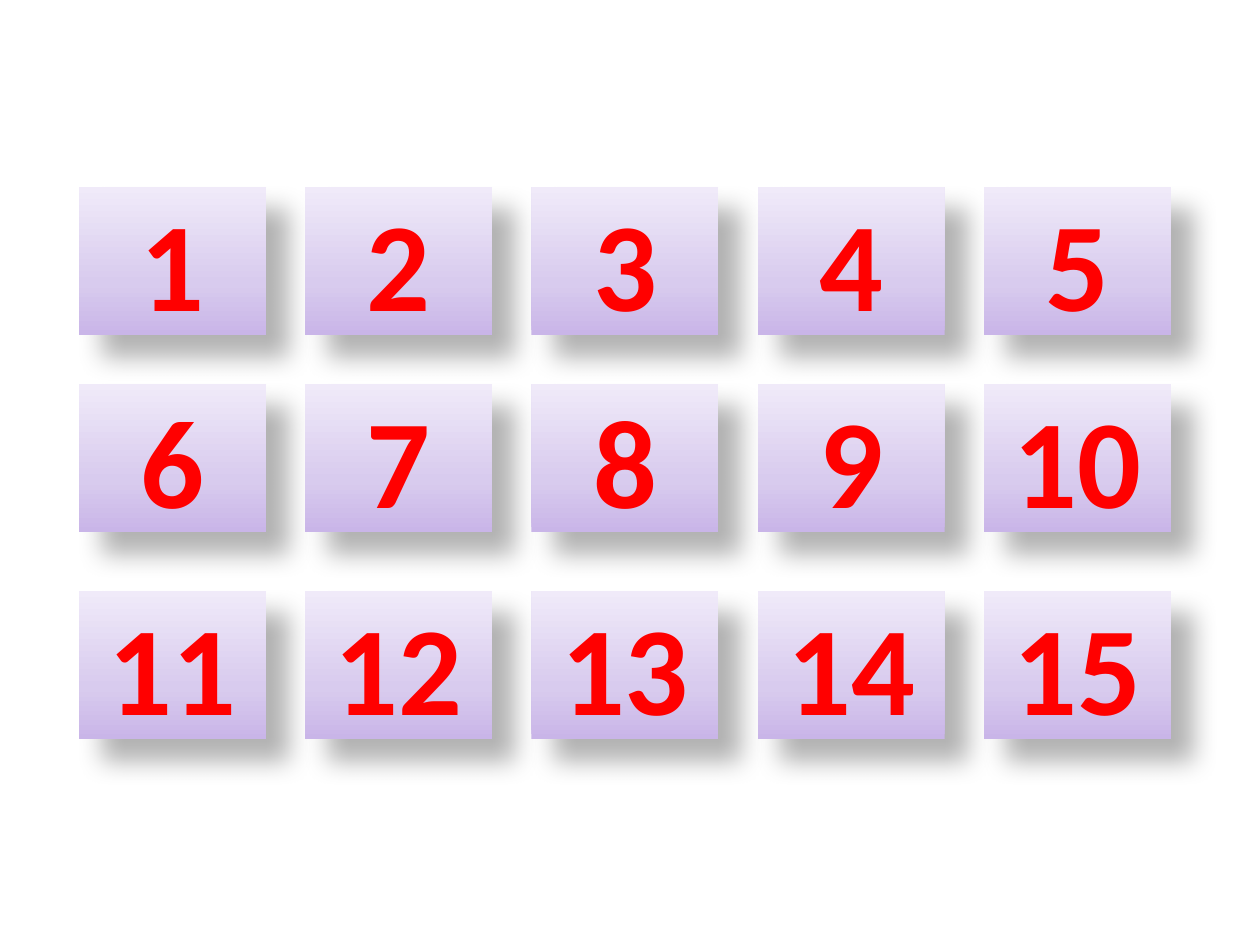
from copy import deepcopy

from lxml.etree import SubElement
from pptx import Presentation
from pptx.dml.color import RGBColor
from pptx.enum.shapes import MSO_SHAPE as Shape
from pptx.enum.text import MSO_ANCHOR as Anchor, PP_ALIGN as Align
from pptx.oxml.ns import qn
from pptx.util import Pt

PX = 914400 // 126
GRADIENT = [(0, "C9B5E8"), (0.35, "D8CBEE"), (1, "F0EAF9")]
SHADOW = {"blurRad": Pt(15), "dist": Pt(18), "dir": 45 * 60000,
          "algn": "ctr", "rotWithShape": 0}


def color(value):
    return RGBColor.from_string(value)


NUMBER_FONT = {"name": "Calibri", "size": Pt(72), "bold": True}


def fill_gradient(shape):
    shape.fill.gradient()
    shape.fill.gradient_angle = 90
    stop_list = shape._element.spPr.find(qn("a:gradFill")).find(qn("a:gsLst"))
    stop_list.append(deepcopy(stop_list[0]))
    for stop, (position, value) in zip(shape.fill.gradient_stops, GRADIENT):
        stop.position = position
        stop.color.rgb = color(value)


def cast_shadow(shape):
    shape.shadow.inherit = False
    effects = shape._element.spPr.find(qn("a:effectLst"))
    shadow = SubElement(effects, qn("a:outerShdw"))
    for name, value in SHADOW.items():
        shadow.set(name, str(value))
    shade = SubElement(shadow, qn("a:srgbClr"), val="000000")
    SubElement(shade, qn("a:alpha"), val="30000")


def add_card(slide, number, left, top, width, height):
    box = [round(length * PX) for length in (left, top, width, height)]
    shape = slide.shapes.add_shape(Shape.RECTANGLE, *box)
    fill_gradient(shape)
    shape.line.fill.background()
    cast_shadow(shape)
    shape.text_frame.vertical_anchor = Anchor.MIDDLE
    paragraph = shape.text_frame.paragraphs[0]
    paragraph.alignment = Align.CENTER
    run = paragraph.add_run()
    run.text = str(number)
    for name, value in NUMBER_FONT.items():
        setattr(run.font, name, value)
    run.font.color.rgb = color("FF0000")


def add_card_grid(slide, left, top, width, row_offsets,
                  columns=5, card_width=187, card_height=148):
    step = (width - card_width) / (columns - 1)
    for row, offset in enumerate(row_offsets):
        for column in range(columns):
            add_card(slide, row * columns + column + 1,
                     left + column * step, top + offset,
                     card_width, card_height)


def main():
    presentation = Presentation()
    presentation.slide_width = 1260 * PX
    presentation.slide_height = 945 * PX
    slide = presentation.slides.add_slide(presentation.slide_layouts[6])
    add_card_grid(slide, 79, 187, 1092, row_offsets=(0, 197, 404))
    presentation.save("out.pptx")


if __name__ == "__main__":
    main()
